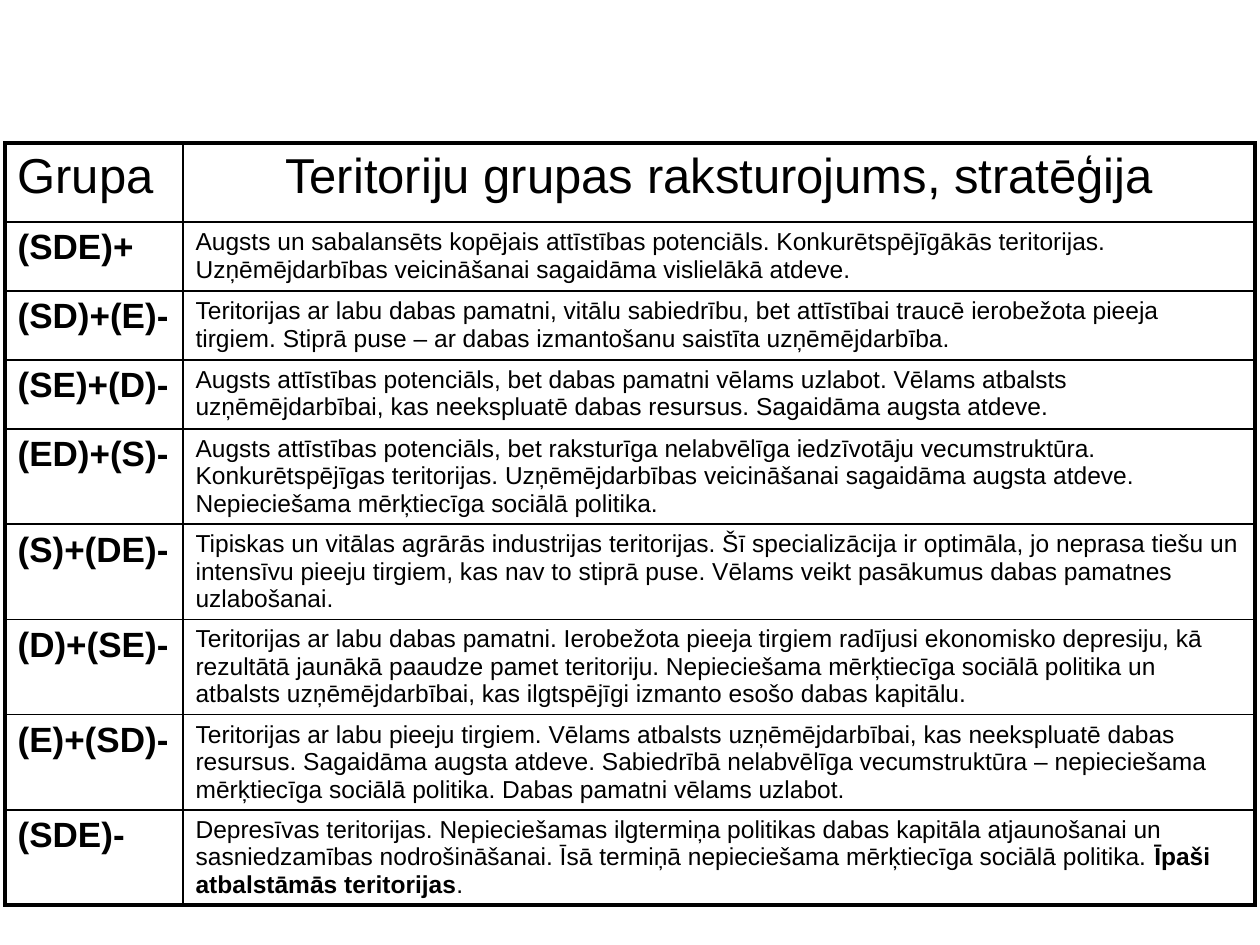
"""Build a slide with a table of territory groups and their strategies."""
import pptx
import pptx.dml.color
import pptx.enum.text
import pptx.oxml
import pptx.oxml.ns
import pptx.util

PX = 914400 // 126
SLIDE = (1260, 945)
TABLE = (5, 143, 1250, 798)
COLUMNS = (178, 1072)
HEADER_HEIGHT, ROW_HEIGHT = 79, 69
INK = "000000"
INNER_LINE, OUTER_LINE = 1, 2.25

HEADER = ("Grupa", "Teritoriju grupas raksturojums, stratēģija")
GROUPS = [
    ("(SDE)+", "Augsts un sabalansēts kopējais attīstības potenciāls. Konkurētspējīgākās teritorijas. "
     "Uzņēmējdarbības veicināšanai sagaidāma vislielākā atdeve."),
    ("(SD)+(E)-", "Teritorijas ar labu dabas pamatni, vitālu sabiedrību, bet attīstībai traucē ierobežota "
     "pieeja tirgiem. Stiprā puse – ar dabas izmantošanu saistīta uzņēmējdarbība."),
    ("(SE)+(D)-", "Augsts attīstības potenciāls, bet dabas pamatni vēlams uzlabot. Vēlams atbalsts "
     "uzņēmējdarbībai, kas neekspluatē dabas resursus. Sagaidāma augsta atdeve."),
    ("(ED)+(S)-", "Augsts attīstības potenciāls, bet raksturīga nelabvēlīga iedzīvotāju vecumstruktūra. "
     "Konkurētspējīgas teritorijas. Uzņēmējdarbības veicināšanai sagaidāma augsta atdeve. "
     "Nepieciešama mērķtiecīga sociālā politika."),
    ("(S)+(DE)-", "Tipiskas un vitālas agrārās industrijas teritorijas. Šī specializācija ir optimāla, jo "
     "neprasa tiešu un intensīvu pieeju tirgiem, kas nav to stiprā puse. Vēlams veikt pasākumus dabas "
     "pamatnes uzlabošanai."),
    ("(D)+(SE)-", "Teritorijas ar labu dabas pamatni. Ierobežota pieeja tirgiem radījusi ekonomisko "
     "depresiju, kā rezultātā jaunākā paaudze pamet teritoriju. Nepieciešama mērķtiecīga sociālā politika "
     "un atbalsts uzņēmējdarbībai, kas ilgtspējīgi izmanto esošo dabas kapitālu."),
    ("(E)+(SD)-", "Teritorijas ar labu pieeju tirgiem. Vēlams atbalsts uzņēmējdarbībai, kas neekspluatē "
     "dabas resursus. Sagaidāma augsta atdeve. Sabiedrībā nelabvēlīga vecumstruktūra – nepieciešama "
     "mērķtiecīga sociālā politika. Dabas pamatni vēlams uzlabot."),
    ("(SDE)-", "Depresīvas teritorijas. Nepieciešamas ilgtermiņa politikas dabas kapitāla atjaunošanai un "
     "sasniedzamības nodrošināšanai. Īsā termiņā nepieciešama mērķtiecīga sociālā politika. "
     "*Īpaši atbalstāmās teritorijas*."),
]
HEADER_FONT = {"size": pptx.util.Pt(28), "bold": False, "name": "Arial"}
GROUP_FONT = {"size": pptx.util.Pt(20), "bold": True, "name": "Arial"}
STRATEGY_FONT = {"size": pptx.util.Pt(14), "bold": False, "name": "Arial"}


def color(value):
    return pptx.dml.color.RGBColor.from_string(value)


def write(cell, text, font_format):
    """Write text into a cell, with parts between asterisks in bold."""
    paragraph = cell.text_frame.paragraphs[0]
    for index, part in enumerate(text.split("*")):
        run = paragraph.add_run()
        run.text = part
        for name, value in font_format.items():
            setattr(run.font, name, value)
        run.font.color.rgb = color(INK)
        if index % 2:
            run.font.bold = True
    return paragraph


def draw_borders(cell, outer_sides):
    """Draw the four cell borders, thicker on the outer sides."""
    properties = cell._tc.get_or_add_tcPr()
    for side in "LRTB":
        width = pptx.util.Pt(OUTER_LINE if outer_sides[side] else INNER_LINE)
        properties.append(pptx.oxml.parse_xml(
            f'<a:ln{side} {pptx.oxml.ns.nsdecls("a")} w="{width}">'
            f'<a:solidFill><a:srgbClr val="{INK}"/></a:solidFill></a:ln{side}>'))


def main():
    """Build and save the presentation."""
    presentation = pptx.Presentation()
    presentation.slide_width, presentation.slide_height = (length * PX for length in SLIDE)
    slide = presentation.slides.add_slide(presentation.slide_layouts[6])
    rows = [HEADER, *GROUPS]
    shape = slide.shapes.add_table(len(rows), len(COLUMNS), *(length * PX for length in TABLE))
    table = shape.table
    table.first_row = table.horz_banding = False
    for column, width in zip(table.columns, COLUMNS):
        column.width = width * PX
    last_row, last_column = len(rows) - 1, len(COLUMNS) - 1
    for row_index, texts in enumerate(rows):
        table.rows[row_index].height = (ROW_HEIGHT if row_index else HEADER_HEIGHT) * PX
        fonts = (GROUP_FONT, STRATEGY_FONT) if row_index else (HEADER_FONT, HEADER_FONT)
        for column_index, (text, font_format) in enumerate(zip(texts, fonts)):
            cell = table.cell(row_index, column_index)
            paragraph = write(cell, text, font_format)
            if row_index == 0 and column_index == last_column:
                paragraph.alignment = pptx.enum.text.PP_ALIGN.CENTER
            draw_borders(cell, {"L": column_index == 0, "R": column_index == last_column,
                                "T": row_index == 0, "B": row_index == last_row})
            cell.fill.background()
    shape.height = TABLE[3] * PX
    presentation.save("out.pptx")


if __name__ == "__main__":
    main()
